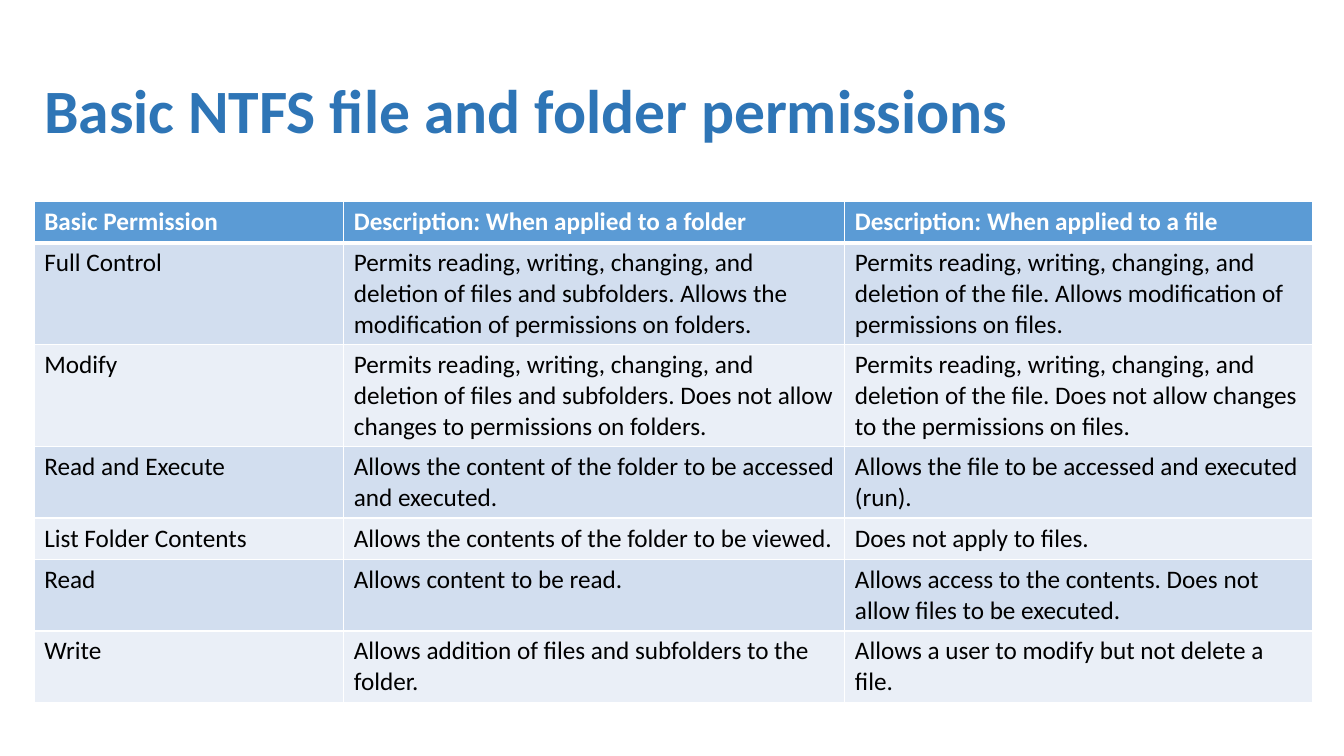
from lxml import etree
from pptx import Presentation
from pptx import util as u
from pptx.dml.color import RGBColor
from pptx.enum import text
from pptx.oxml import ns

PX = 9144  # EMU in one px, 100 px to the inch
WHITE = RGBColor(0xFF, 0xFF, 0xFF)
BLACK = RGBColor(0x00, 0x00, 0x00)
TITLE_BLUE = RGBColor(0x2E, 0x75, 0xB6)
HEADER_BLUE = RGBColor(0x5B, 0x9B, 0xD5)
BANDS = [RGBColor(0xD2, 0xDE, 0xEF), RGBColor(0xEA, 0xEF, 0xF7)]

COLUMN_WIDTHS = [307, 497, 464]
LINES_PER_ROW = [1, 3, 3, 2, 1, 2, 2]
LINE_HEIGHT, ROW_PADDING = 30, 11

PERMISSIONS = [
    ["Basic Permission",
     "Description: When applied to a folder",
     "Description: When applied to a file"],
    ["Full Control",
     "Permits reading, writing, changing, and deletion of files and subfolders. "
     "Allows the modification of permissions on folders.",
     "Permits reading, writing, changing, and deletion of the file. "
     "Allows modification of permissions on files."],
    ["Modify",
     "Permits reading, writing, changing, and deletion of files and subfolders. "
     "Does not allow changes to permissions on folders.",
     "Permits reading, writing, changing, and deletion of the file. "
     "Does not allow changes to the permissions on files."],
    ["Read and Execute",
     "Allows the content of the folder to be accessed and executed.",
     "Allows the file to be accessed and executed (run)."],
    ["List Folder Contents",
     "Allows the contents of the folder to be viewed.",
     "Does not apply to files."],
    ["Read",
     "Allows content to be read.",
     "Allows access to the contents. Does not allow files to be executed."],
    ["Write",
     "Allows addition of files and subfolders to the folder.",
     "Allows a user to modify but not delete a file."],
]


class SlideBuilder:
    def __init__(self, page, font):
        self.page = page
        self.font = font

    def run(self, para, words, size, color, bold=False):
        span = para.add_run()
        span.text = words
        span.font.name = self.font
        span.font.size = u.Pt(size)
        span.font.bold = bold
        span.font.color.rgb = color

    def title(self, words, left, top, width, height):
        box = self.page.shapes.add_textbox(left * PX, top * PX, width * PX, height * PX)
        frame = box.text_frame
        frame.word_wrap = True
        frame.vertical_anchor = text.MSO_ANCHOR.MIDDLE
        para = frame.paragraphs[0]
        para.line_spacing = 0.9
        self.run(para, words, 44, TITLE_BLUE, bold=True)

    def borders(self, cell, bottom):
        """Draw white cell borders, 1 pt wide except for the bottom one."""
        properties = cell._tc.get_or_add_tcPr()
        sides = [("lnL", 1), ("lnR", 1), ("lnT", 1), ("lnB", bottom)]
        for index, (side, points) in enumerate(sides):
            line = etree.Element(ns.qn("a:" + side), w=str(u.Pt(points)))
            fill = etree.SubElement(line, ns.qn("a:solidFill"))
            etree.SubElement(fill, ns.qn("a:srgbClr"), val=str(WHITE))
            properties.insert(index, line)

    def table(self, rows, left, top, widths, heights):
        table = self.page.shapes.add_table(
            len(rows), len(widths), left * PX, top * PX,
            sum(widths) * PX, sum(heights) * PX).table
        for column, width in zip(table.columns, widths):
            column.width = width * PX
        for r, (row, height) in enumerate(zip(rows, heights)):
            table.rows[r].height = height * PX
            header = r == 0
            for c, words in enumerate(row):
                cell = table.cell(r, c)
                cell.fill.solid()
                cell.fill.fore_color.rgb = HEADER_BLUE if header else BANDS[(r - 1) % 2]
                self.borders(cell, bottom=3 if header else 1)
                if r == 1:
                    cell._tc.tcPr.find(ns.qn("a:lnT")).set("w", str(u.Pt(3)))
                self.run(cell.text_frame.paragraphs[0], words, 18,
                         WHITE if header else BLACK, bold=header)


def main():
    deck = Presentation()
    deck.slide_width, deck.slide_height = 1333 * PX, 750 * PX
    page = deck.slides.add_slide(deck.slide_layouts[6])
    builder = SlideBuilder(page, "Calibri")
    builder.title("Basic NTFS file and folder permissions", 34, 40, 1268, 145)
    heights = [LINE_HEIGHT * lines + ROW_PADDING for lines in LINES_PER_ROW]
    builder.table(PERMISSIONS, 34, 200, COLUMN_WIDTHS, heights)
    deck.save("out.pptx")


if __name__ == "__main__":
    main()
